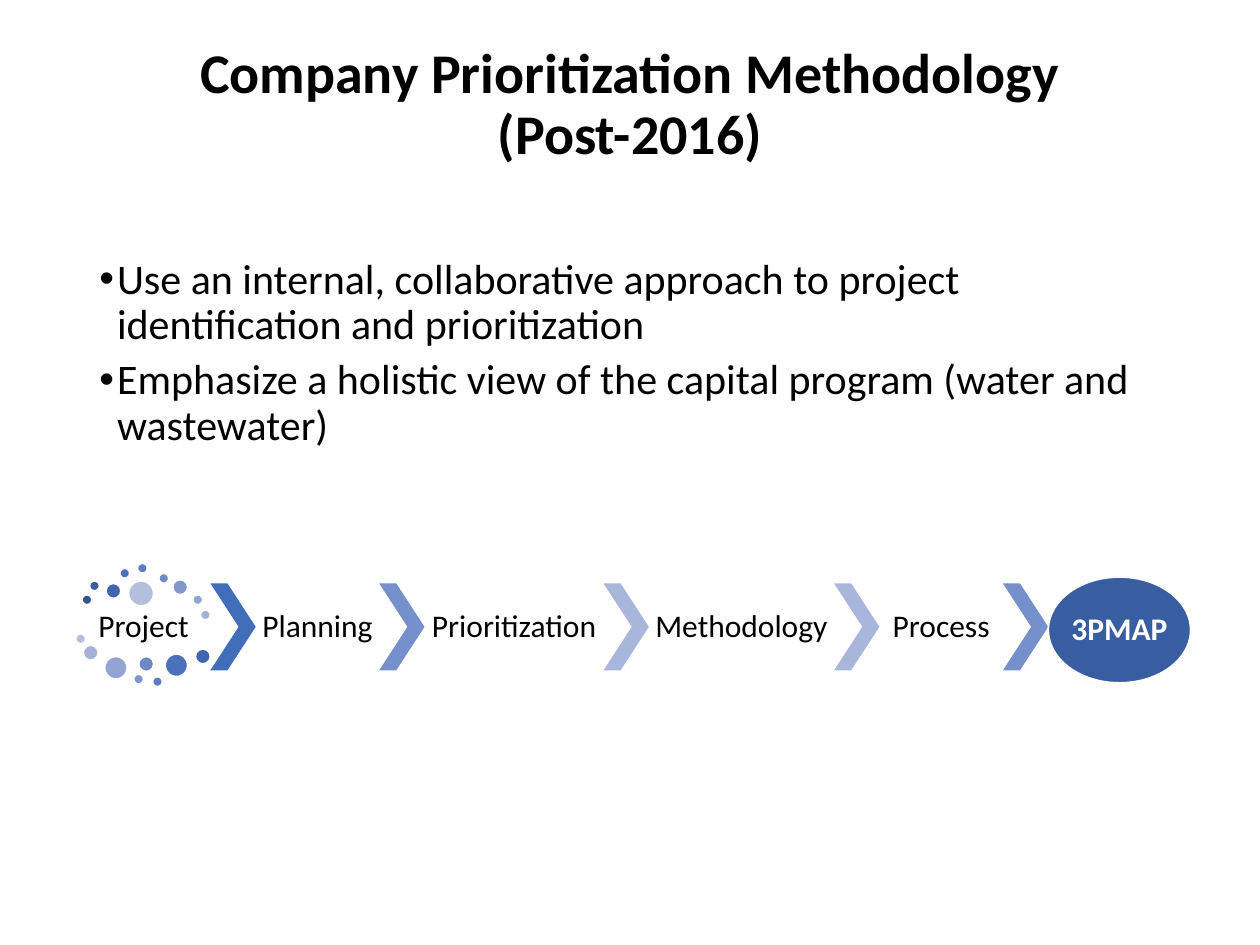
from lxml.etree import SubElement
from pptx import Presentation
from pptx.dml.color import RGBColor
from pptx.enum.shapes import MSO_SHAPE
from pptx.enum.text import MSO_ANCHOR, PP_ALIGN
from pptx.oxml.ns import qn
from pptx.util import Inches, Pt

FONT = "Calibri"
BLACK = RGBColor(0x00, 0x00, 0x00)
WHITE = RGBColor(0xFF, 0xFF, 0xFF)
NAVY = RGBColor(0x39, 0x5D, 0xA1)
BLUE = RGBColor(0x41, 0x6D, 0xBB)
MID_BLUE = RGBColor(0x75, 0x90, 0xCB)
PALE_BLUE = RGBColor(0xA8, 0xB6, 0xDB)
DOT_RAMP = [RGBColor.from_string(code) for code in (
    "325491", "395DA1", "4166B1", "4C71BC", "5E7DC1",
    "708AC6", "8197CC", "93A4D2", "A4B1D8", "B4BFDE")]

# Left, top and diameter: upper arc dark to light, lower arc light to dark
DOTS = [
    (0.65, 4.72, 0.08), (0.71, 4.61, 0.08), (0.84, 4.63, 0.12),
    (0.95, 4.51, 0.08), (1.09, 4.47, 0.08), (1.26, 4.55, 0.08),
    (1.37, 4.6, 0.12), (1.53, 4.72, 0.08), (1.59, 4.84, 0.08),
    (1.02, 4.61, 0.2), (0.6, 5.03, 0.08), (0.66, 5.12, 0.12),
    (0.83, 5.21, 0.18), (1.06, 5.35, 0.08), (1.1, 5.21, 0.12),
    (1.21, 5.37, 0.08), (1.31, 5.19, 0.18), (1.55, 5.15, 0.12),
]

# Chevron colour, then the step it leads to and that step's width
STEPS = [
    (BLUE, "Planning", 0.98),
    (MID_BLUE, "Prioritization", 1.42),
    (PALE_BLUE, "Methodology", 1.47),
    (PALE_BLUE, "Process", 0.98),
]
FLOW_LEFT, FLOW_TOP, FLOW_HEIGHT, CHEVRON_WIDTH = 1.67, 4.63, 0.69, 0.36

BULLETS = [
    "Use an internal, collaborative approach to project identification and prioritization",
    "Emphasize a holistic view of the capital program (water and wastewater)",
]


def format_paragraph(paragraph, size, color=BLACK, bold=False, align=PP_ALIGN.CENTER):
    paragraph.alignment = align
    paragraph.line_spacing = 0.9
    for span in paragraph.runs:
        span.font.name = FONT
        span.font.size = Pt(size)
        span.font.bold = bold
        span.font.color.rgb = color


def set_label(shape, text, inset, color=BLACK, bold=False):
    frame = shape.text_frame
    frame.word_wrap = True
    frame.vertical_anchor = MSO_ANCHOR.MIDDLE
    frame.margin_left = frame.margin_right = Inches(inset)
    frame.margin_top = frame.margin_bottom = Inches(inset)
    frame.text = text
    format_paragraph(frame.paragraphs[0], 18, color, bold)


def add_label(page, text, left, top, width, height):
    box = page.shapes.add_textbox(Inches(left), Inches(top), Inches(width), Inches(height))
    set_label(box, text, 0.03)


def add_filled(page, kind, left, top, width, height, color):
    shape = page.shapes.add_shape(
        kind, Inches(left), Inches(top), Inches(width), Inches(height))
    shape.shadow.inherit = False
    shape.fill.solid()
    shape.fill.fore_color.rgb = color
    shape.line.fill.background()
    return shape


def add_ellipse(page, left, top, width, height, color):
    ellipse = add_filled(page, MSO_SHAPE.OVAL, left, top, width, height, color)
    ellipse.line.color.rgb = WHITE
    ellipse.line.width = Pt(1)
    return ellipse


def add_chevron(page, left, color):
    chevron = add_filled(page, MSO_SHAPE.CHEVRON, left, FLOW_TOP,
                         CHEVRON_WIDTH, FLOW_HEIGHT, color)
    chevron.adjustments[0] = 0.623


def set_title(page, text):
    title = page.shapes.title
    title.left, title.top = Inches(0.69), Inches(0.4)
    title.width, title.height = Inches(8.62), Inches(0.88)
    title.text_frame.text = text
    title.text_frame.word_wrap = True
    title.text_frame.vertical_anchor = MSO_ANCHOR.MIDDLE
    format_paragraph(title.text_frame.paragraphs[0], 32, bold=True)


def add_bullets(page, lines):
    box = page.shapes.add_textbox(Inches(0.69), Inches(2), Inches(8.62), Inches(4.76))
    frame = box.text_frame
    frame.word_wrap = True
    for index, line in enumerate(lines):
        paragraph = frame.add_paragraph() if index else frame.paragraphs[0]
        paragraph.text = line
        format_paragraph(paragraph, 24, align=PP_ALIGN.LEFT)
        if index:
            paragraph.space_before = Pt(5.6)
        properties = paragraph._p.get_or_add_pPr()
        properties.set("marL", str(Inches(0.14)))
        properties.set("indent", str(-Inches(0.14)))
        SubElement(properties, qn("a:buFont"), typeface="Arial")
        SubElement(properties, qn("a:buChar"), char="•")


def add_flow(page):
    # Starting step inside its ring of dots
    add_label(page, "Project", 0.65, 4.82, 0.98, 0.32)
    for (left, top, size), color in zip(DOTS, DOT_RAMP + DOT_RAMP[::-1]):
        add_ellipse(page, left, top, size, size, color)

    # Chevrons and steps, laid end to end
    left = FLOW_LEFT
    for color, text, width in STEPS:
        add_chevron(page, left, color)
        left += CHEVRON_WIDTH
        add_label(page, text, left, FLOW_TOP, width, FLOW_HEIGHT)
        left += width

    # Result
    add_chevron(page, left, MID_BLUE)
    result = add_ellipse(page, left + CHEVRON_WIDTH, 4.58, 1.13, 0.84, NAVY)
    set_label(result, "3PMAP", 0, WHITE, bold=True)


def main():
    deck = Presentation()
    deck.slide_width, deck.slide_height = Inches(10), Inches(7.5)
    page = deck.slides.add_slide(deck.slide_layouts[5])
    set_title(page, "Company Prioritization Methodology (Post-2016)")
    add_bullets(page, BULLETS)
    add_flow(page)
    deck.save("out.pptx")


if __name__ == "__main__":
    main()
